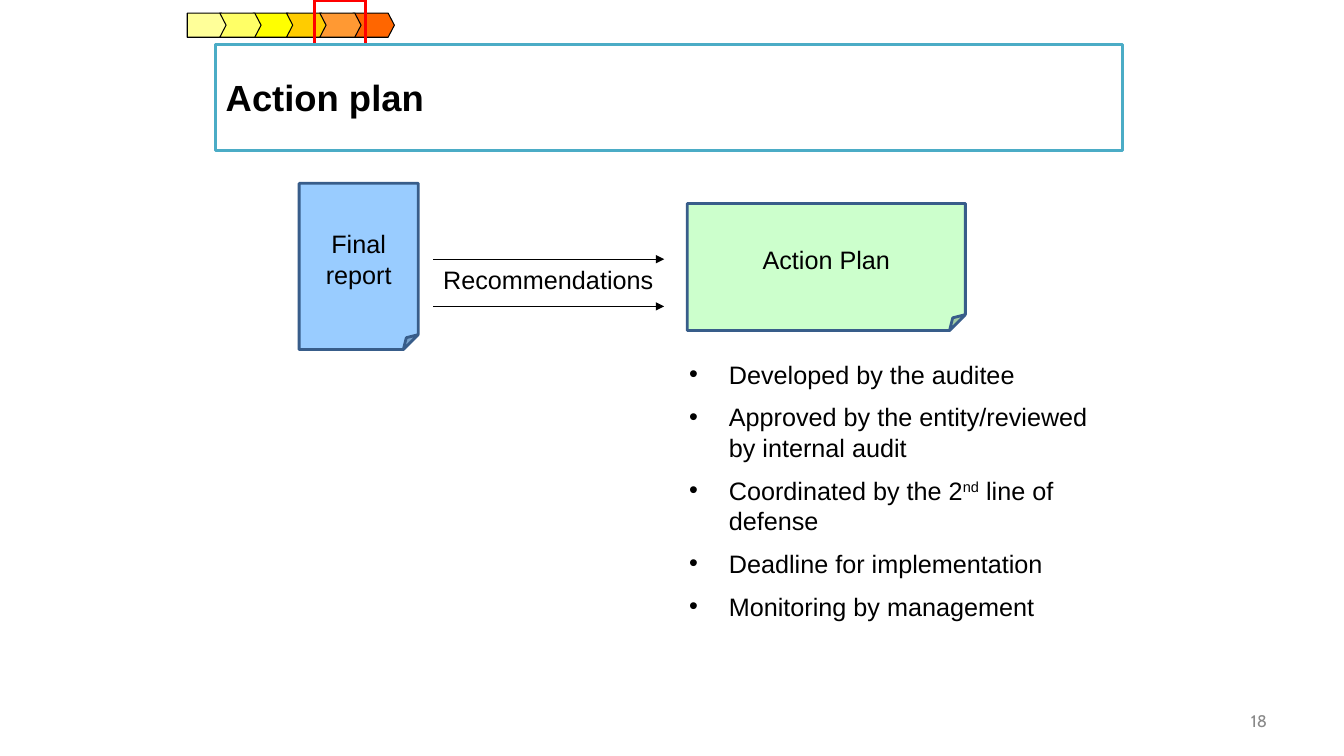
import dataclasses

import lxml.etree
import pptx
import pptx.dml.color
import pptx.enum.shapes
import pptx.enum.text
import pptx.oxml.ns
import pptx.util

Cm = pptx.util.Cm
Pt = pptx.util.Pt
ShapeKind = pptx.enum.shapes.MSO_SHAPE
Align = pptx.enum.text.PP_ALIGN
Anchor = pptx.enum.text.MSO_ANCHOR

COLORS = {
    "black": "000000", "white": "FFFFFF", "gray": "898989",
    "cream": "FFFF99", "lemon": "FFFF66", "yellow": "FFFF00",
    "gold": "FFCC00", "orange": "FF9933", "deep orange": "FF6600",
    "red": "FF0000", "sky": "99CCFF", "mint": "CCFFCC",
    "navy": "385D8A", "teal": "4BACC6",
}


@dataclasses.dataclass
class Box:
    left: float
    top: float
    width: float
    height: float

    def lengths(self) -> tuple:
        return Cm(self.left), Cm(self.top), Cm(self.width), Cm(self.height)


@dataclasses.dataclass
class Step:
    position: int
    color: str


@dataclasses.dataclass
class Document:
    title: str
    box: Box
    color: str


STEP_PITCH = 0.84
STEPS = [
    Step(0, "cream"), Step(2, "yellow"), Step(3, "gold"),
    Step(5, "deep orange"), Step(4, "orange"), Step(1, "lemon"),
]
DOCUMENTS = [
    Document("Final report", Box(7.54, 4.62, 3, 4.19), "sky"),
    Document("Action Plan", Box(17.32, 5.13, 7.01, 3.2), "mint"),
]
ARROW_LEFT, ARROW_RIGHT = 10.92, 16.74
ARROW_TOPS = [6.53, 7.72]
PLAN_POINTS = [
    "Developed by the auditee",
    "Approved by the entity/reviewed by internal audit",
    "Coordinated by the 2^nd^ line of defense",
    "Deadline for implementation",
    "Monitoring by management",
]


def rgb(color: str) -> pptx.dml.color.RGBColor:
    return pptx.dml.color.RGBColor.from_string(COLORS[color])


def add_xml(parent, tag: str, **attributes: str):
    return lxml.etree.SubElement(parent, pptx.oxml.ns.qn(tag), attributes)


def write_text(shape, lines: list[str], *, size: float = 18, font: str = "Arial",
               color: str = "black", bold: bool = False, align=Align.LEFT,
               anchor=Anchor.MIDDLE, spaced: bool = False, bullet: bool = False) -> None:
    frame = shape.text_frame
    frame.word_wrap = True
    frame.vertical_anchor = anchor
    for index, line in enumerate(lines):
        paragraph = frame.add_paragraph() if index else frame.paragraphs[0]
        paragraph.alignment = align
        properties = paragraph._p.get_or_add_pPr()
        if spaced:
            add_xml(add_xml(properties, "a:spcBef"), "a:spcPct", val="50000")
        if bullet:
            properties.set("marL", str(Cm(1)))
            properties.set("indent", str(-Cm(1)))
            add_xml(properties, "a:buFont", typeface="Arial")
            add_xml(properties, "a:buChar", char="•")
        for part_index, part in enumerate(line.split("^")):
            run = paragraph.add_run()
            run.text = part
            run.font.size = Pt(size)
            run.font.name = font
            run.font.bold = bold
            run.font.color.rgb = rgb(color)
            if part_index % 2:
                run.font._element.set("baseline", "30000")


def add_shape(shapes, kind, box: Box, fill: str | None, line: str, width: float):
    shape = shapes.add_shape(kind, *box.lengths())
    shape.shadow.inherit = False
    if fill:
        shape.fill.solid()
        shape.fill.fore_color.rgb = rgb(fill)
    else:
        shape.fill.background()
    shape.line.color.rgb = rgb(line)
    shape.line.width = Pt(width)
    return shape


def add_step(shapes, step: Step) -> None:
    if step.position == 0:
        kind, box = ShapeKind.PENTAGON, Box(4.72, 0.33, 1.02, 0.61)
    else:
        left = 5.54 + STEP_PITCH * (step.position - 1)
        kind, box = ShapeKind.CHEVRON, Box(left, 0.33, 1.04, 0.61)
    shape = add_shape(shapes, kind, box, step.color, "black", 0.75)
    shape.adjustments[0] = 0.26


def add_document(shapes, document: Document) -> None:
    shape = add_shape(shapes, ShapeKind.FOLDED_CORNER, document.box, document.color, "navy", 2)
    adjustments = shape._element.spPr.find(".//" + pptx.oxml.ns.qn("a:avLst"))
    add_xml(adjustments, "a:gd", name="adj", fmla="val 12500")
    write_text(shape, [document.title], align=Align.CENTER)


def add_arrow(shapes, top: float) -> None:
    arrow = shapes.add_connector(pptx.enum.shapes.MSO_CONNECTOR.STRAIGHT,
                                 Cm(ARROW_LEFT), Cm(top), Cm(ARROW_RIGHT), Cm(top))
    arrow.line.color.rgb = rgb("black")
    arrow.line.width = Pt(0.75)
    add_xml(arrow.line._get_or_add_ln(), "a:tailEnd", type="triangle")
    add_xml(arrow._element.spPr, "a:effectLst")


def main() -> None:
    presentation = pptx.Presentation()
    presentation.slide_width = Cm(33.87)
    presentation.slide_height = Cm(19.05)
    slide = presentation.slides.add_slide(presentation.slide_layouts[6])
    shapes = slide.shapes

    page_number = shapes.add_textbox(*Box(24.28, 17.65, 7.9, 1.02).lengths())
    write_text(page_number, ["18"], size=12, font="Cabin", color="gray", align=Align.RIGHT)

    progress = shapes.add_group_shape()
    for step in STEPS:
        add_step(progress.shapes, step)
    add_shape(shapes, ShapeKind.RECTANGLE, Box(7.92, 0, 1.3, 1.12), None, "red", 2.25)

    for document in DOCUMENTS:
        add_document(shapes, document)
    for top in ARROW_TOPS:
        add_arrow(shapes, top)

    plan_points = shapes.add_textbox(*Box(17.12, 8.92, 11.18, 7.19).lengths())
    write_text(plan_points, PLAN_POINTS, anchor=Anchor.TOP, spaced=True, bullet=True)
    arrow_label = shapes.add_textbox(*Box(10.92, 6.53, 5.94, 1.02).lengths())
    write_text(arrow_label, ["Recommendations"], anchor=Anchor.TOP, spaced=True)

    title = add_shape(shapes, ShapeKind.RECTANGLE, Box(5.44, 1.12, 22.86, 2.67),
                      "white", "teal", 2)
    write_text(title, ["Action plan"], size=26, bold=True)

    presentation.save("out.pptx")


if __name__ == "__main__":
    main()
